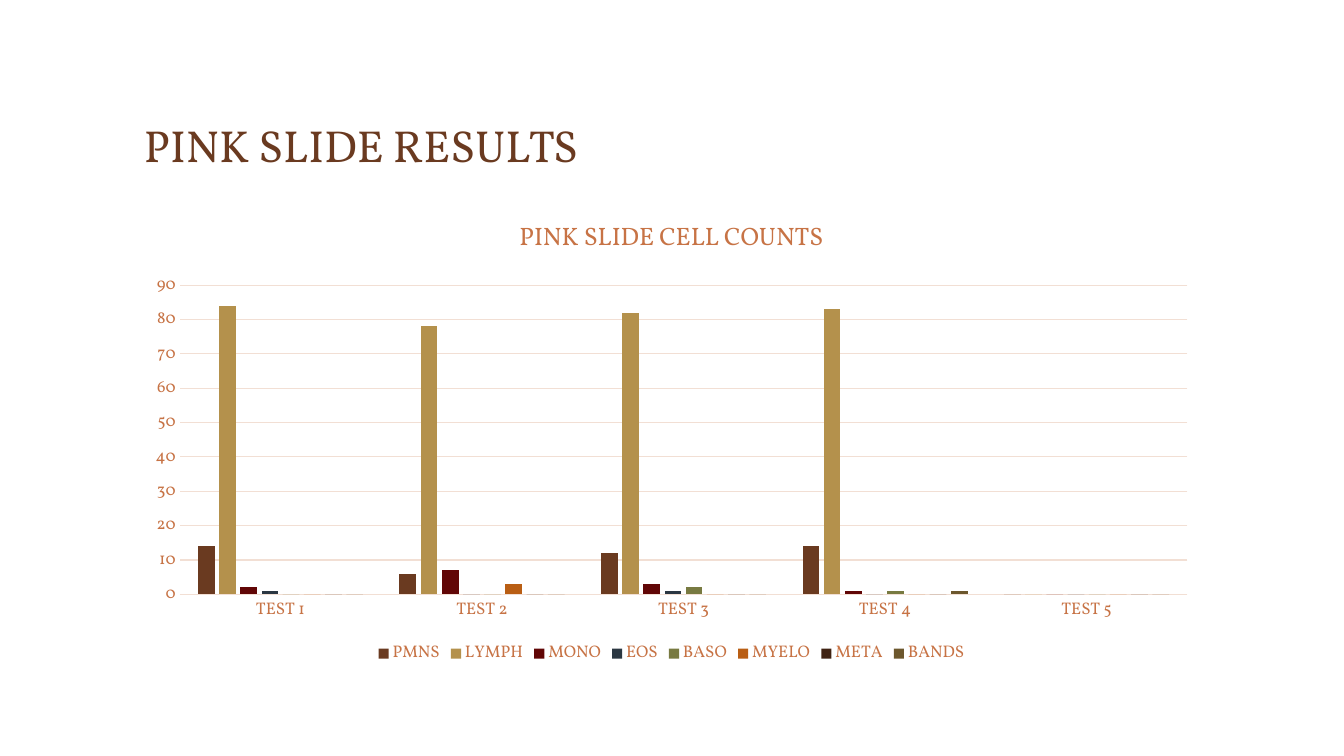
"""Build the pink slide results page with its clustered column chart."""
from dataclasses import dataclass

from pptx import Presentation
from pptx.chart.chart import Chart
from pptx.chart.data import CategoryChartData
from pptx.dml.color import RGBColor
from pptx.dml.line import LineFormat
from pptx.enum.chart import XL_CHART_TYPE, XL_LEGEND_POSITION, XL_TICK_MARK
from pptx.enum.text import MSO_ANCHOR
from pptx.slide import Slide
from pptx.text.text import Font
from pptx.util import Inches, Pt

FONT = "Vollkorn"
BROWN = "6A3A20"
COPPER = "C77345"
PALE = "F2DFD4"
LEFT, WIDTH = Inches(1.33), Inches(10.66)
TESTS = [f"TEST {n}" for n in range(1, 6)]


@dataclass(frozen=True)
class CellCount:
    name: str
    values: tuple[int, ...]
    color: str


CELL_COUNTS = [
    CellCount("PMNS", (14, 6, 12, 14, 0), BROWN),
    CellCount("LYMPH", (84, 78, 82, 83, 0), "B4914C"),
    CellCount("MONO", (2, 7, 3, 1, 0), "610606"),
    CellCount("EOS", (1, 0, 1, 0, 0), "2B3742"),
    CellCount("BASO", (0, 0, 2, 1, 0), "787A41"),
    CellCount("MYELO", (0, 3, 0, 0, 0), "B95E14"),
    CellCount("META", (0, 0, 0, 0, 0), "402313"),
    CellCount("BANDS", (0, 0, 0, 1, 0), "6C572D"),
]


def rgb(color: str) -> RGBColor:
    return RGBColor.from_string(color)


def set_font(font: Font, size: float, color: str) -> None:
    font.name = FONT
    font.size = Pt(size)
    font.bold = False
    font.color.rgb = rgb(color)


def set_line(line: LineFormat) -> None:
    line.color.rgb = rgb(PALE)
    line.width = Pt(0.75)


def add_title(s: Slide, text: str) -> None:
    tf = s.shapes.add_textbox(LEFT, Inches(0.47), WIDTH, Inches(1.28)).text_frame
    tf.word_wrap = True
    tf.vertical_anchor = MSO_ANCHOR.BOTTOM
    p = tf.paragraphs[0]
    p.text = text
    set_font(p.font, 32, BROWN)


def add_count_chart(s: Slide) -> Chart:
    data = CategoryChartData()
    data.categories = TESTS
    for count in CELL_COUNTS:
        data.add_series(count.name, count.values)
    chart = s.shapes.add_chart(XL_CHART_TYPE.COLUMN_CLUSTERED, LEFT, Inches(1.97),
                               WIDTH, Inches(4.67), data).chart
    set_font(chart.font, 10, BROWN)
    plot = chart.plots[0]
    plot.gap_width = 219
    plot.overlap = -27
    plot.vary_by_categories = False
    for series, count in zip(plot.series, CELL_COUNTS):
        series.format.fill.solid()
        series.format.fill.fore_color.rgb = rgb(count.color)
    return chart


def style_chart(chart: Chart, title: str) -> None:
    chart.has_title = True
    p = chart.chart_title.text_frame.paragraphs[0]
    p.text = title
    set_font(p.font, 18, COPPER)
    chart.chart_title.include_in_layout = False
    chart.has_legend = True
    chart.legend.position = XL_LEGEND_POSITION.BOTTOM
    chart.legend.include_in_layout = False
    set_font(chart.legend.font, 12, COPPER)
    for axis in (chart.category_axis, chart.value_axis):
        axis.major_tick_mark = XL_TICK_MARK.NONE
        axis.minor_tick_mark = XL_TICK_MARK.NONE
        set_font(axis.tick_labels.font, 12, COPPER)
    set_line(chart.category_axis.format.line)
    chart.value_axis.format.line.fill.background()
    chart.value_axis.has_major_gridlines = True
    set_line(chart.value_axis.major_gridlines.format.line)


def main() -> None:
    prs = Presentation()
    prs.slide_width, prs.slide_height = Inches(13.33), Inches(7.5)
    s = prs.slides.add_slide(prs.slide_layouts[6])
    add_title(s, "PINK SLIDE RESULTS")
    style_chart(add_count_chart(s), "PINK SLIDE CELL COUNTS")
    prs.save("out.pptx")


if __name__ == "__main__":
    main()
